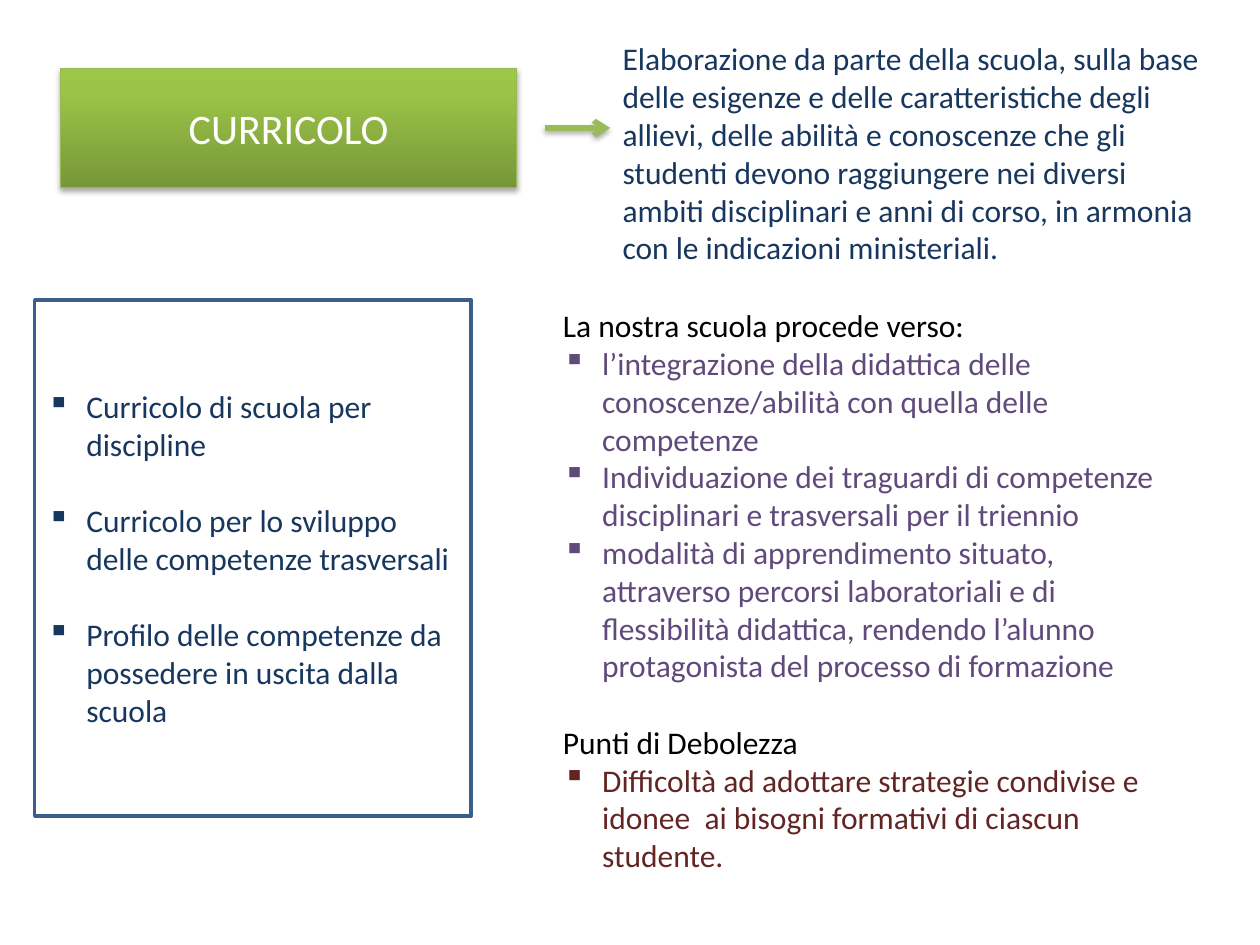
from pptx import Presentation
from pptx.dml.color import RGBColor
from pptx.enum.shapes import MSO_CONNECTOR, MSO_SHAPE
from pptx.enum.text import MSO_ANCHOR, PP_ALIGN
from pptx.oxml import parse_xml
from pptx.oxml.ns import nsdecls, qn
from pptx.util import Cm, Pt

NAVY, PURPLE, MAROON, BLACK, WHITE = "17375E", "604A7B", "632523", "000000", "FFFFFF"
BLANK_LINE = 22


def color(hex_value):
    """Return the colour for a hex string."""
    return RGBColor.from_string(hex_value)


def add_xml(parent, xml):
    """Append a drawing element written as XML to its parent."""
    parent.append(parse_xml(f"<a:wrapper {nsdecls('a')}>{xml}</a:wrapper>")[0])


def add_shadow(shape):
    """Give a shape or connector a soft shadow below it."""
    add_xml(shape._element.spPr, '<a:effectLst><a:outerShdw blurRad="40000" dist="23000" '
            'dir="5400000" rotWithShape="0"><a:srgbClr val="000000">'
            '<a:alpha val="35000"/></a:srgbClr></a:outerShdw></a:effectLst>')


def write_paragraphs(frame, entries, size=18, align=PP_ALIGN.LEFT):
    """Fill a frame from (text, colour, bulleted, points before) entries."""
    frame.word_wrap = True
    for index, (text, hex_value, bulleted, before) in enumerate(entries):
        paragraph = frame.paragraphs[0] if index == 0 else frame.add_paragraph()
        paragraph.text = text
        paragraph.alignment = align
        paragraph.space_before = Pt(before)
        paragraph.font.size = Pt(size)
        paragraph.font.name = "Calibri"
        paragraph.font.color.rgb = color(hex_value)
        if bulleted:
            properties = paragraph._p.get_or_add_pPr()
            properties.set("marL", str(Cm(0.79)))
            properties.set("indent", str(-Cm(0.79)))
            bullet = parse_xml(f'<a:buChar {nsdecls("a")} char="▪"/>')
            properties.insert_element_before(bullet, "a:tabLst", "a:defRPr", "a:extLst")


def add_box(slide, left, top, width, height, border, weight):
    """Add an outlined rectangle with vertically centred text."""
    box = slide.shapes.add_shape(MSO_SHAPE.RECTANGLE, left, top, width, height)
    box.line.color.rgb = color(border)
    box.line.width = Pt(weight)
    box.text_frame.vertical_anchor = MSO_ANCHOR.MIDDLE
    return box


def add_title(slide, left, top, width, height):
    """Add the green title block."""
    box = add_box(slide, left, top, width, height, "98B955", 0.75)
    box.fill.gradient()
    box.fill.gradient_angle = 90
    stops = box._element.spPr.find(f".//{qn('a:gsLst')}")
    stops.clear()
    for position, hex_value in ((0, "779737"), (80, "9BC348"), (100, "9DC746")):
        add_xml(stops, f'<a:gs pos="{position * 1000}"><a:srgbClr val="{hex_value}"/></a:gs>')
    add_shadow(box)
    write_paragraphs(box.text_frame, [("CURRICOLO", WHITE, False, 0)], 24, PP_ALIGN.CENTER)


def add_arrow(slide, left, top, width):
    """Add the horizontal arrow from the title to its definition."""
    arrow = slide.shapes.add_connector(MSO_CONNECTOR.STRAIGHT, left, top, left + width, top)
    arrow.line.color.rgb = color("9BBB59")
    arrow.line.width = Pt(3)
    add_xml(arrow._element.spPr.find(qn("a:ln")), '<a:tailEnd type="arrow"/>')
    add_shadow(arrow)


def add_curricula(slide, left, top, width, height):
    """Add the framed list of curricula."""
    box = add_box(slide, left, top, width, height, "3A5F8C", 2)
    box.fill.solid()
    box.fill.fore_color.rgb = color(WHITE)
    box.shadow.inherit = False
    write_paragraphs(box.text_frame, [
        ("Curricolo di scuola per discipline", NAVY, True, 0),
        ("Curricolo per lo sviluppo delle competenze trasversali", NAVY, True, BLANK_LINE),
        ("Profilo delle competenze da possedere in uscita dalla scuola", NAVY, True, BLANK_LINE),
    ])


def add_text(slide, left, top, width, height, entries):
    """Add an unframed block of paragraphs."""
    box = slide.shapes.add_textbox(left, top, width, height)
    write_paragraphs(box.text_frame, entries)


def main():
    """Build the curriculum slide."""
    presentation = Presentation()
    presentation.slide_width, presentation.slide_height = Cm(25.4), Cm(19.05)
    slide = presentation.slides.add_slide(presentation.slide_layouts[6])
    add_title(slide, Cm(1.22), Cm(1.38), Cm(9.2), Cm(2.4))
    add_curricula(slide, Cm(0.7), Cm(6.05), Cm(8.8), Cm(10.4))
    add_text(slide, Cm(11.1), Cm(6.05), Cm(12.7), Cm(11.8), [
        ("La nostra scuola procede verso:", BLACK, False, 0),
        ("l’integrazione della didattica delle conoscenze/abilità con quella delle competenze",
         PURPLE, True, 0),
        ("Individuazione dei traguardi di competenze disciplinari e trasversali per il triennio",
         PURPLE, True, 0),
        ("modalità di apprendimento situato, attraverso percorsi laboratoriali e di flessibilità "
         "didattica, rendendo l’alunno protagonista del processo di formazione", PURPLE, True, 0),
        ("Punti di Debolezza", BLACK, False, BLANK_LINE),
        ("Difficoltà ad adottare strategie condivise e idonee  ai bisogni formativi di ciascun "
         "studente.", MAROON, True, 0),
    ])
    add_text(slide, Cm(12.3), Cm(0.67), Cm(12.15), Cm(4.88), [
        ("Elaborazione da parte della scuola, sulla base delle esigenze e delle caratteristiche "
         "degli allievi, delle abilità e conoscenze che gli studenti devono raggiungere nei "
         "diversi ambiti disciplinari e anni di corso, in armonia con le indicazioni "
         "ministeriali.", NAVY, False, 0),
    ])
    add_arrow(slide, Cm(10.98), Cm(2.58), Cm(1.32))
    presentation.save("out.pptx")


if __name__ == "__main__":
    main()
